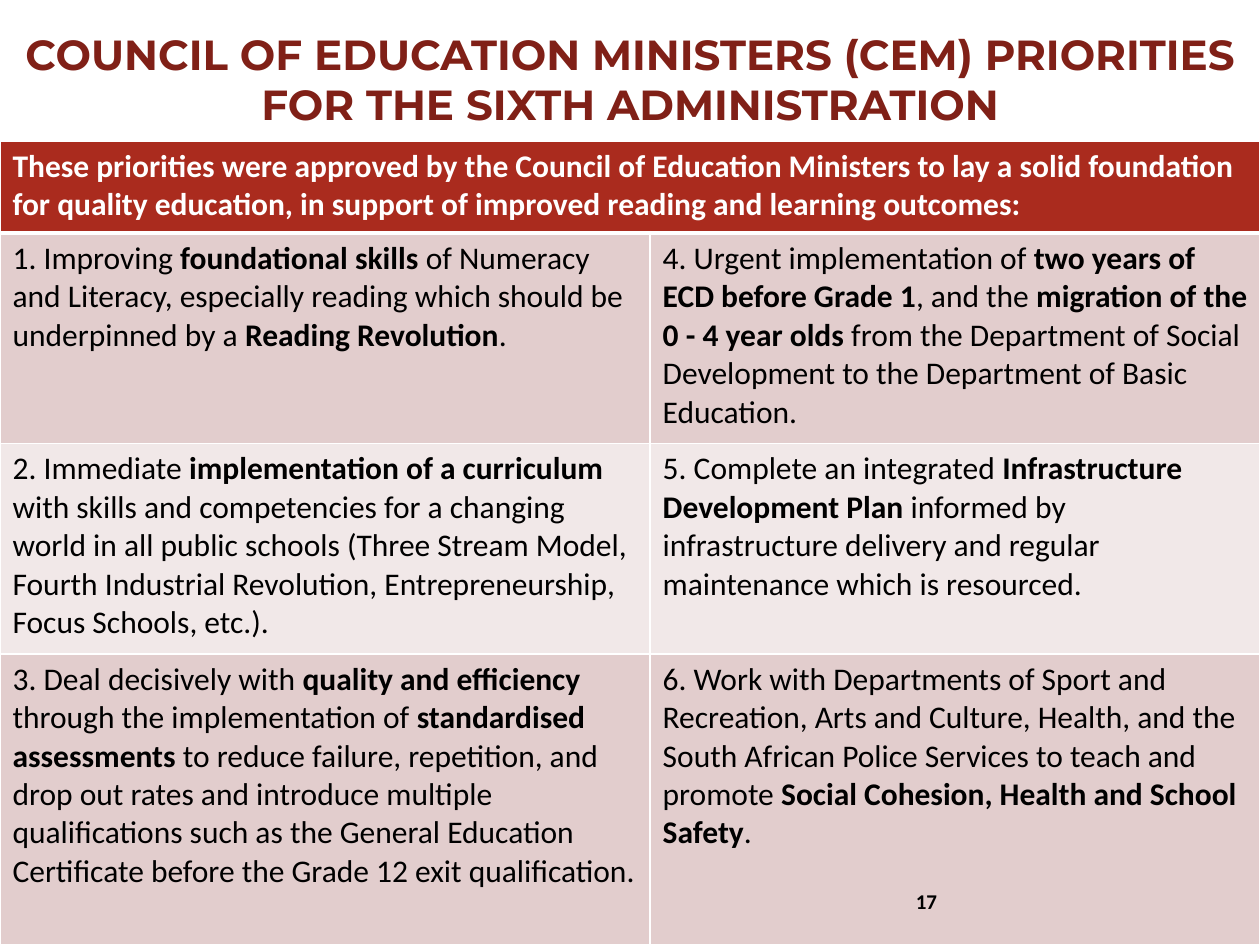
from dataclasses import dataclass

from lxml import etree
from pptx import Presentation
from pptx.dml.color import RGBColor
from pptx.enum.text import MSO_ANCHOR, PP_ALIGN
from pptx.oxml.ns import qn
from pptx.util import Inches, Pt

LEFT, CENTER = PP_ALIGN.LEFT, PP_ALIGN.CENTER
MIDDLE = MSO_ANCHOR.MIDDLE

COLORS = {
    "title": "802017",
    "head": "AA2B1E",
    "dark": "E2CDCD",
    "light": "F1E8E8",
    "white": "FFFFFF",
    "black": "000000",
}
STYLES = {
    "title": {"name": "Montserrat", "size": Pt(24), "bold": True},
    "head": {"name": "Calibri", "size": Pt(18), "bold": True},
    "body": {"name": "Calibri", "size": Pt(18), "bold": False},
    "page": {"name": "Calibri", "size": Pt(12), "bold": True},
}
COLS = (5.16, 4.84)
ROWS = (0.73, 1.67, 1.67, 2.31)


@dataclass
class Label:
    text: str
    box: tuple[float, float, float, float]
    style: str
    color: str
    align: int = LEFT


LABELS = [
    Label("COUNCIL OF EDUCATION MINISTERS (CEM) PRIORITIES FOR THE SIXTH ADMINISTRATION",
          (0, 0, 10, 1.25), "title", "title", CENTER),
    Label("17", (7.17, 6.95, 2.33, 0.4), "page", "black"),
]

HEAD = ("These priorities were approved by the Council of Education Ministers to lay "
        "a solid foundation for quality education, in support of improved reading "
        "and learning outcomes:")

# Text between asterisks is bold
GOALS = [
    ("1. Improving *foundational skills *of Numeracy and Literacy, especially reading "
     "which should be underpinned by a *Reading Revolution*.",
     "4. Urgent implementation of *two years of ECD before Grade 1*, and the "
     "*migration of the 0 - 4 year olds *from the Department of Social Development "
     "to the Department of Basic Education."),
    ("2. Immediate *implementation of a curriculum *with skills and competencies for "
     "a changing world in all public schools (Three Stream Model, Fourth Industrial "
     "Revolution, Entrepreneurship, Focus Schools, etc.).",
     "5. Complete an integrated *Infrastructure Development Plan *informed by "
     "infrastructure delivery and regular maintenance which is resourced."),
    ("3. Deal decisively with *quality and efficiency *through the implementation of "
     "*standardised assessments *to reduce failure, repetition, and drop out rates "
     "and introduce multiple qualifications such as the General Education "
     "Certificate before the Grade 12 exit qualification.",
     "6. Work with Departments of Sport and Recreation, Arts and Culture, Health, "
     "and the South African Police Services to teach and promote "
     "*Social Cohesion, Health and School Safety*."),
]


def rgb(key: str) -> RGBColor:
    return RGBColor.from_string(COLORS[key])


def write(frame, text: str, style: str, color: str, align: int = LEFT) -> None:
    para = frame.paragraphs[0]
    para.alignment = align
    for i, part in enumerate(text.split("*")):
        run = para.add_run()
        run.text = part
        for key, value in STYLES[style].items():
            setattr(run.font, key, value)
        if i % 2:
            run.font.bold = True
        run.font.color.rgb = rgb(color)


def add_label(slide, label: Label) -> None:
    frame = slide.shapes.add_textbox(*map(Inches, label.box)).text_frame
    frame.word_wrap = True
    frame.vertical_anchor = MIDDLE
    write(frame, label.text, label.style, label.color, label.align)


def paint(cell, fill: str, base: float = 1) -> None:
    # Borders come before the fill in the cell properties
    props = cell._tc.get_or_add_tcPr()
    for side, width in (("L", 1), ("R", 1), ("T", 1), ("B", base)):
        line = etree.SubElement(props, qn(f"a:ln{side}"), w=str(Pt(width)))
        solid = etree.SubElement(line, qn("a:solidFill"))
        etree.SubElement(solid, qn("a:srgbClr"), val=COLORS["white"])
    cell.fill.solid()
    cell.fill.fore_color.rgb = rgb(fill)


def add_goals(slide) -> None:
    box = (0, 1.12, sum(COLS), sum(ROWS))
    table = slide.shapes.add_table(len(ROWS), len(COLS), *map(Inches, box)).table
    for col, width in zip(table.columns, COLS):
        col.width = Inches(width)
    for row, height in zip(table.rows, ROWS):
        row.height = Inches(height)

    # Header across both columns
    for cell in table.rows[0].cells:
        paint(cell, "head", 3)
    table.cell(0, 0).merge(table.cell(0, 1))
    write(table.cell(0, 0).text_frame, HEAD, "head", "white")

    # Banded rows of priorities
    for r, texts in enumerate(GOALS, 1):
        for c, text in enumerate(texts):
            cell = table.cell(r, c)
            paint(cell, "dark" if r % 2 else "light")
            write(cell.text_frame, text, "body", "black")


def main() -> None:
    deck = Presentation()
    deck.slide_width, deck.slide_height = Inches(10), Inches(7.5)
    slide = deck.slides.add_slide(deck.slide_layouts[6])
    title, page = LABELS
    add_label(slide, title)
    add_goals(slide)
    add_label(slide, page)
    deck.save("out.pptx")


if __name__ == "__main__":
    main()
